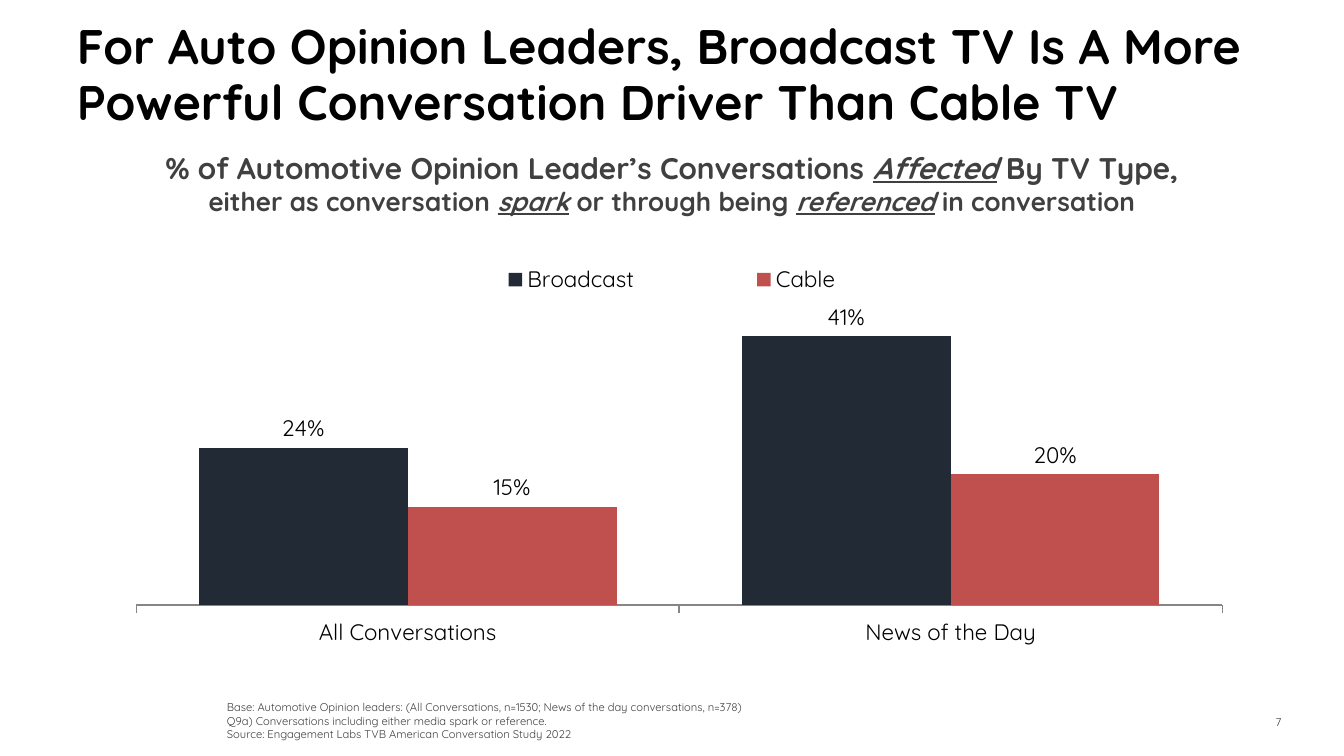
from lxml import etree
from pptx import Presentation
from pptx.chart.data import CategoryChartData
from pptx.dml.color import RGBColor
from pptx.enum.chart import XL_CHART_TYPE, XL_LABEL_POSITION, XL_LEGEND_POSITION, XL_TICK_MARK
from pptx.enum.text import MSO_ANCHOR, MSO_AUTO_SIZE, PP_ALIGN
from pptx.oxml.ns import qn
from pptx.util import Pt

COLUMNS = XL_CHART_TYPE.COLUMN_CLUSTERED
LABEL_ABOVE = XL_LABEL_POSITION.OUTSIDE_END
LEGEND_TOP = XL_LEGEND_POSITION.TOP
TICK_OUT, TICK_NONE = XL_TICK_MARK.OUTSIDE, XL_TICK_MARK.NONE
TOP, MIDDLE, BOTTOM = MSO_ANCHOR.TOP, MSO_ANCHOR.MIDDLE, MSO_ANCHOR.BOTTOM
LEFT, CENTER, RIGHT = PP_ALIGN.LEFT, PP_ALIGN.CENTER, PP_ALIGN.RIGHT
NO_AUTOFIT = MSO_AUTO_SIZE.NONE

FONT = "Quicksand"
BLACK, GRAY, AXIS_GRAY = "000000", "404040", "868686"

TITLE = "For Auto Opinion Leaders, Broadcast TV Is A More Powerful Conversation Driver Than Cable TV"
SUBTITLE = [
    (16, ["% of Automotive Opinion Leader’s Conversations ", "Affected", " By TV Type,"]),
    (14, ["either as conversation ", "spark", " or through being ", "referenced", " in conversation"]),
]
EMPHASIZED = {"Affected", "spark", "referenced"}
CATEGORIES = ["All Conversations", "News of the Day"]
SERIES = [
    ("Broadcast", [0.24, 0.41], "222A35"),
    ("Cable", [0.15, 0.20], "C0504D"),
]
FOOTNOTES = [
    "Base: Automotive Opinion leaders: (All Conversations, n=1530; News of the day conversations, n=378)",
    "Q9a) Conversations including either media spark or reference.",
    "Source: Engagement Labs TVB American Conversation Study 2022",
]
PAGE_NUMBER = "7"


def rgb(color):
    """Turn a hex string into a colour."""
    return RGBColor.from_string(color)


def style(font, size, color, bold=False):
    """Give a font the deck's typeface with a size and colour."""
    font.name, font.size, font.bold = FONT, Pt(size), bold
    font.color.rgb = rgb(color)


def add_text(slide, box, lines, size, color, align, anchor):
    """Add a text box with one paragraph per line."""
    frame = slide.shapes.add_textbox(*map(Pt, box)).text_frame
    frame.word_wrap, frame.vertical_anchor = True, anchor
    frame.text = "\n".join(lines)
    for paragraph in frame.paragraphs:
        paragraph.alignment = align
        for run in paragraph.runs:
            style(run.font, size, color)


def add_title(slide):
    """Fill the title placeholder."""
    title = slide.shapes.title
    title.left, title.top, title.width, title.height = map(Pt, (34, 11, 652, 65))
    frame = title.text_frame
    frame.text = TITLE
    frame.auto_size, frame.vertical_anchor, frame.word_wrap = NO_AUTOFIT, TOP, True
    frame.margin_top = 0
    paragraph = frame.paragraphs[0]
    paragraph.alignment, paragraph.line_spacing = LEFT, 0.95
    style(paragraph.runs[0].font, 26, BLACK, True)


def add_subtitle(slide):
    """Add the two-line subtitle with its emphasized words."""
    frame = slide.shapes.add_textbox(*map(Pt, (80, 76.5, 560, 44))).text_frame
    frame.word_wrap = False
    frame.text = "\n".join("" for _ in SUBTITLE)
    for paragraph, (size, parts) in zip(frame.paragraphs, SUBTITLE):
        paragraph.alignment = CENTER
        for part in parts:
            run = paragraph.add_run()
            run.text = part
            style(run.font, size, GRAY, True)
            run.font.italic = run.font.underline = part in EMPHASIZED


def set_layout(element, bounds, inner=False):
    """Place a chart part at fractions of the chart area."""
    for old in element.findall(qn("c:layout")):
        element.remove(old)
    layout = etree.Element(qn("c:layout"))
    manual = etree.SubElement(layout, qn("c:manualLayout"))
    values = [("layoutTarget", "inner")] if inner else []
    values += [("xMode", "edge"), ("yMode", "edge"), *zip("xywh", bounds)]
    for tag, value in values:
        etree.SubElement(manual, qn("c:" + tag)).set("val", str(value))
    element.insert(0 if inner else 1, layout)


def add_conversation_chart(slide):
    """Add the clustered columns by TV type."""
    data = CategoryChartData(number_format="0%")
    data.categories = CATEGORIES
    for name, values, _ in SERIES:
        data.add_series(name, values)
    chart = slide.shapes.add_chart(COLUMNS, *map(Pt, (61, 136, 598, 230)), data).chart
    style(chart.font, 12, BLACK)
    chart.has_title = False
    chart.has_legend = True
    legend = chart.legend
    legend.position, legend.include_in_layout = LEGEND_TOP, False
    style(legend.font, 12, BLACK)
    set_layout(legend._element, (0.25, 0.02, 0.5, 0.08))
    set_layout(chart._chartSpace.chart.plotArea, (0.02, 0.055, 0.973, 0.763), True)

    value_axis, category_axis = chart.value_axis, chart.category_axis
    value_axis.minimum_scale, value_axis.maximum_scale = 0, 0.5
    value_axis.has_major_gridlines = value_axis.visible = False
    category_axis.major_tick_mark, category_axis.minor_tick_mark = TICK_OUT, TICK_NONE
    category_axis.format.line.color.rgb = rgb(AXIS_GRAY)
    category_axis.format.line.width = Pt(0.75)
    style(category_axis.tick_labels.font, 12, BLACK)

    plot = chart.plots[0]
    plot.gap_width, plot.overlap, plot.vary_by_categories = 60, 0, False
    for series, (_, _, color) in zip(plot.series, SERIES):
        series.format.fill.solid()
        series.format.fill.fore_color.rgb = rgb(color)
        labels = series.data_labels
        labels.show_value, labels.position = True, LABEL_ABOVE
        labels.number_format, labels.number_format_is_linked = "0%", False
        style(labels.font, 12, BLACK)


def main():
    """Build and save the slide."""
    deck = Presentation()
    deck.slide_width, deck.slide_height = Pt(720), Pt(405)
    slide = deck.slides.add_slide(deck.slide_layouts[5])
    add_title(slide)
    add_subtitle(slide)
    add_conversation_chart(slide)
    add_text(slide, (114.5, 371.5, 602.5, 29), FOOTNOTES, 6, GRAY, LEFT, BOTTOM)
    add_text(slide, (651, 376, 42.5, 21.5), [PAGE_NUMBER], 6, "3C3C3A", RIGHT, MIDDLE)
    deck.save("out.pptx")


if __name__ == "__main__":
    main()
